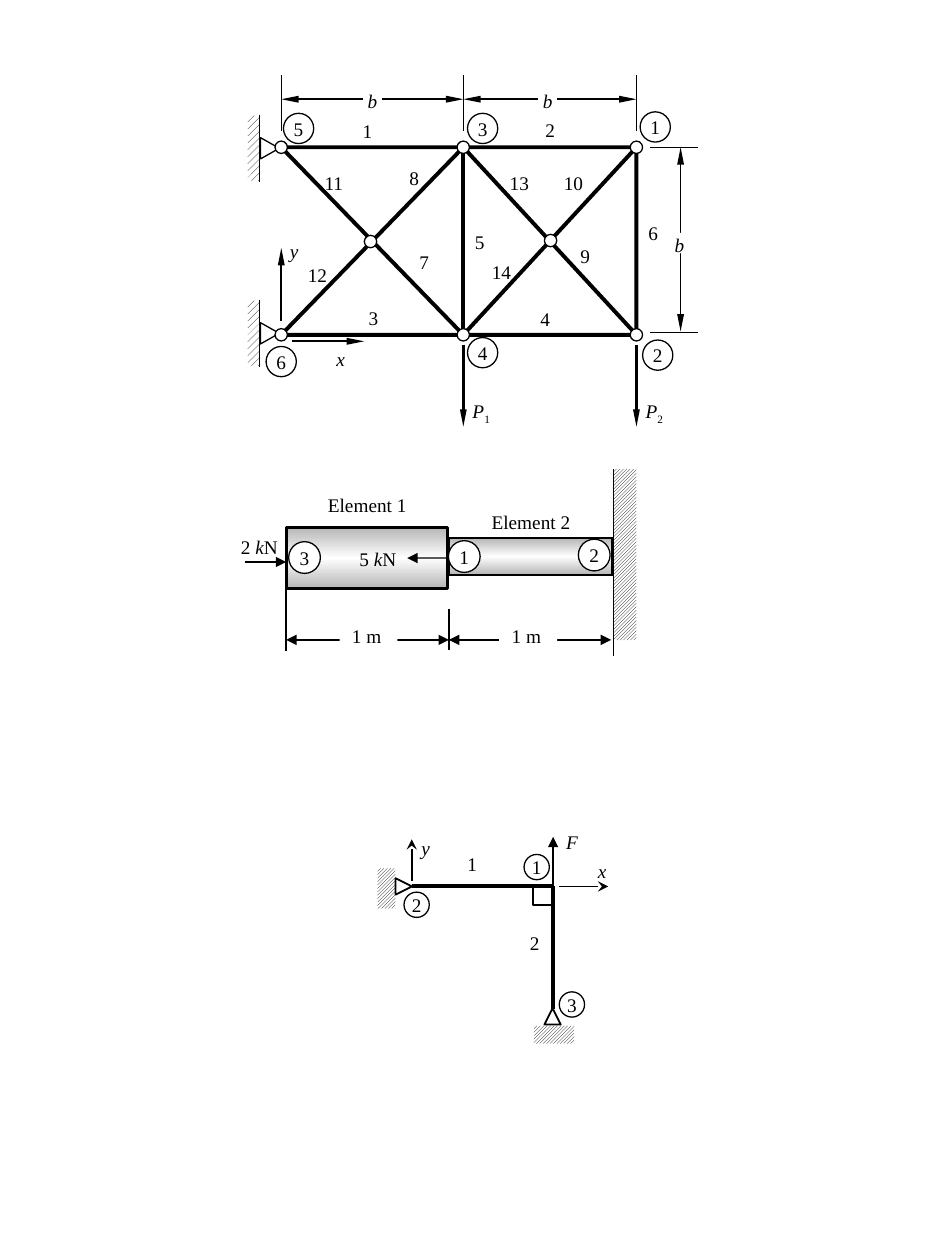
from copy import deepcopy
from dataclasses import dataclass

from lxml import etree
from pptx import Presentation
from pptx import util as u
from pptx.dml.color import RGBColor
from pptx.enum import dml, shapes, text
from pptx.oxml.ns import qn


@dataclass(frozen=True)
class Theme:
    """Colours, font, type size and line widths in points."""
    ink: RGBColor = RGBColor(0, 0, 0)
    paper: RGBColor = RGBColor(255, 255, 255)
    steel: RGBColor = RGBColor(0xB6, 0xB6, 0xB6)
    font: str = "Times New Roman"
    size: float = 11
    hair: float = 0.75
    thin: float = 1
    force: float = 1.5
    member: float = 2.25


@dataclass(frozen=True)
class Region:
    """A box on the page, in centimetres."""
    page: object
    left: float
    top: float

    def at(self, x, y):
        """Turn a point of the region into a point of the page."""
        return u.Cm(self.left + x), u.Cm(self.top + y)


THEME = Theme()
SHAPE = shapes.MSO_SHAPE
ALIGN = text.PP_ALIGN
ANCHOR = text.MSO_ANCHOR
WIDE = dml.MSO_PATTERN.WIDE_UPWARD_DIAGONAL
LIGHT = dml.MSO_PATTERN.LIGHT_UPWARD_DIAGONAL
ITALIC = {"italic": True}
KILONEWTON = [(" k", ITALIC), ("N", {})]


def ink_line(item, width):
    """Give an item a black line, or none when the width is zero."""
    if width:
        item.line.color.rgb = THEME.ink
        item.line.width = u.Pt(width)
    else:
        item.line.fill.background()


def add_line(region, start, end, width, tail=None, head=None, narrow=False):
    """Draw a straight line with optional arrowheads."""
    line = region.page.shapes.add_connector(
        shapes.MSO_CONNECTOR.STRAIGHT, *region.at(*start), *region.at(*end))
    ink_line(line, width)
    properties = line.element.spPr
    outline = properties.find(qn("a:ln"))
    for tag, kind in (("a:headEnd", head), ("a:tailEnd", tail)):
        if kind:
            tip = etree.SubElement(outline, qn(tag), type=kind)
            if narrow:
                tip.set("w", "sm")
                tip.set("len", "lg")
    etree.SubElement(properties, qn("a:effectLst"))
    return line


def add_path(region, points, width):
    """Draw an open unfilled path through the points."""
    spots = [region.at(*point) for point in points]
    builder = region.page.shapes.build_freeform(*spots[0])
    builder.add_line_segments(spots[1:], close=False)
    path = builder.convert_to_shape()
    path.shadow.inherit = False
    path.fill.background()
    ink_line(path, width)


def add_block(region, kind, center, size, width=0, fill=None, pattern=None, turn=0):
    """Place a preset shape by its centre."""
    wide, high = size
    corner = region.at(center[0] - wide / 2, center[1] - high / 2)
    block = region.page.shapes.add_shape(kind, *corner, u.Cm(wide), u.Cm(high))
    block.shadow.inherit = False
    block.rotation = turn
    ink_line(block, width)
    if pattern:
        block.fill.patterned()
        block.fill.pattern = pattern
        block.fill.fore_color.rgb = THEME.ink
        block.fill.back_color.rgb = THEME.paper
    elif fill:
        block.fill.solid()
        block.fill.fore_color.rgb = fill
    else:
        block.fill.background()
    return block


def write(box, runs, align=ALIGN.CENTER, anchor=ANCHOR.TOP, margins=(0, 0, 0, 0), wrap=True):
    """Fill a box with one paragraph of formatted runs."""
    frame = box.text_frame
    layout = dict(zip(("margin_left", "margin_top", "margin_right", "margin_bottom"), map(u.Cm, margins)))
    layout.update(word_wrap=wrap, vertical_anchor=anchor)
    for name, value in layout.items():
        setattr(frame, name, value)
    para = frame.paragraphs[0]
    para.alignment = align
    for words, extra in runs:
        span = para.add_run()
        span.text = words
        span.font.color.rgb = THEME.ink
        look = {"name": THEME.font, "size": u.Pt(THEME.size), "italic": False, **extra}
        subscript = look.pop("subscript", False)
        for name, value in look.items():
            setattr(span.font, name, value)
        if subscript:
            span._r.get_or_add_rPr().set("baseline", "-25000")


def add_label(region, runs, center, size, fill=None, **layout):
    """Place text by the centre of its box, on a patch when a fill is given."""
    if fill:
        box = add_block(region, SHAPE.RECTANGLE, center, size, fill=fill)
    else:
        corner = region.at(center[0] - size[0] / 2, center[1] - size[1] / 2)
        box = region.page.shapes.add_textbox(*corner, *map(u.Cm, size))
    write(box, runs, **layout)


def add_node(region, number, center, size, fill=None):
    """Draw a numbered circle."""
    circle = add_block(region, SHAPE.OVAL, center, (size, size), THEME.hair, fill)
    write(circle, [(str(number), {})], anchor=ANCHOR.MIDDLE)


def add_bar(region, center, size):
    """Draw a bar shaded like a cylinder."""
    bar = add_block(region, SHAPE.RECTANGLE, center, size, THEME.force)
    bar.fill.gradient()
    bar.fill.gradient_angle = 270
    for stop, color in zip(bar.fill.gradient_stops, (THEME.steel, THEME.paper)):
        stop.color.rgb = color
    stops = bar.element.spPr.find(".//" + qn("a:gsLst"))
    stops.append(deepcopy(stops[0]))
    for stop, position in zip(stops, (0, 50000, 100000)):
        stop.set("pos", str(position))
    return bar


def draw_truss(region):
    """Draw the truss with its supports, dimensions, axes and loads."""
    left, middle, right = columns = 0.69, 4.36, 7.85
    top, bottom = 1.45, 5.23
    hubs = [(2.49, 3.35), (6.12, 3.33)]
    small = (0.38, 0.41)
    add_path(region, [(left, bottom), (right, bottom), (right, top), (left, top),
                      (middle, bottom), (right, top)], THEME.member)
    add_path(region, [(left, bottom), (middle, top), (right, bottom)], THEME.member)
    add_line(region, (middle, bottom), (middle, top), THEME.member)
    for start, end in [((left, 0.48), (middle, 0.48)), ((middle, 0.48), (right, 0.48)),
                       ((8.74, top), (8.74, 5.16))]:
        add_line(region, start, end, THEME.thin, "triangle", "triangle", narrow=True)
    for start, end in [((0.91, 5.36), (2.36, 5.36)), ((left, 4.95), (left, 3.48))]:
        add_line(region, start, end, THEME.thin, "triangle", narrow=True)
    for number, x in enumerate((middle, right), 1):
        add_line(region, (x, 5.43), (x, 7.08), THEME.force, "triangle", narrow=True)
        runs = [("P", ITALIC), (str(number), {"subscript": True})]
        add_label(region, runs, (x + 0.36, 6.8), (0.53, 0.53), THEME.paper)
    members = [(2.43, 1.09), (6.11, 1.07), (2.55, 4.85), (6.01, 4.88), (4.69, 3.33), (8.19, 3.15),
               (3.57, 3.73), (3.37, 2.03), (6.82, 3.61), (6.58, 2.13), (1.75, 2.13), (1.42, 3.99),
               (5.49, 2.13), (5.13, 3.94)]
    for number, center in enumerate(members, 1):
        add_label(region, [(str(number), {})], center, (0.38 if number < 10 else 0.51, 0.41))
    nodes = [(8.23, 1.04), (8.28, 5.64), (4.75, 1.07), (4.75, 5.59), (1.04, 1.07), (0.69, 5.77)]
    for number, center in enumerate(nodes, 1):
        add_node(region, number, center, 0.61)
    for center in [(2.53, 0.48), (6.06, 0.48), (8.72, 3.38)]:
        add_label(region, [("b", ITALIC)], center, small, THEME.paper)
    for name, center in (("x", (1.89, 5.69)), ("y", (0.95, 3.51))):
        add_label(region, [(name, ITALIC)], center, small)
    for y in (1.47, 5.2):
        add_block(region, SHAPE.RECTANGLE, (0.14, y), (0.25, 1.32), pattern=WIDE)
        add_block(region, SHAPE.ISOSCELES_TRIANGLE, (0.46, y), (0.43, 0.38), THEME.hair, THEME.paper, turn=90)
        add_line(region, (0.25, y - 0.68), (0.25, y + 0.67), THEME.hair)
    for x in columns:
        add_line(region, (x, 1.12), (x, 0), THEME.hair)
    for y in (top, 5.18):
        add_line(region, (9.09, y), (8.13, y), THEME.hair)
    for center in [(x, y) for x in columns for y in (top, bottom)] + hubs:
        add_block(region, SHAPE.OVAL, center, (0.25, 0.25), THEME.hair, THEME.paper)


def draw_stepped_bar(region):
    """Draw the two-element bar fixed to a wall."""
    start, step, wall = 1.17, 4.45, 7.77
    add_bar(region, (6.1, 1.77), (3.3, 0.74))
    thick = add_bar(region, (2.8, 1.8), (3.25, 1.22))
    add_block(region, SHAPE.RECTANGLE, (8, 1.73), (0.46, 3.45), pattern=LIGHT)
    for x, y, end in ((wall, 3.78, 0), (step, 2.82, 3.66), (start, 2.39, 3.68)):
        add_line(region, (x, y), (x, end), THEME.thin)
    for x, end, center in ((start, step, 2.83), (step, 7.72, 6.05)):
        add_line(region, (x, 3.45), (end, 3.45), THEME.thin, "triangle", "triangle")
        add_label(region, [("1 m", {})], (center, 3.44), (1.17, 0.86), THEME.paper,
                  align=ALIGN.JUSTIFY, margins=(0.25, 0.13, 0.25, 0.13))
    pull = add_line(region, (4.42, 1.8), (3.61, 1.8), THEME.hair, "triangle")
    pull.begin_connect(thick, 3)
    add_line(region, (0.33, 1.88), (start, 1.88), THEME.force, "triangle")
    for force, center, before, after in (("5", (3.24, 1.88), 0, 0.25), ("2", (0.6, 1.65), 0.25, 0)):
        add_label(region, [(force, {})] + KILONEWTON, center, (1.19, 0.86),
                  align=ALIGN.JUSTIFY, margins=(before, 0.13, after, 0.13))
    for number, center in enumerate([(4.76, 1.77), (7.38, 1.74), (1.54, 1.79)], 1):
        add_node(region, number, center, 0.64, THEME.paper)
    for number, center in enumerate([(2.81, 0.72), (6.11, 1.08)], 1):
        add_label(region, [(f"Element {number}", {})], center, (1.6, 0.48),
                  align=ALIGN.LEFT, anchor=ANCHOR.MIDDLE, wrap=False)


def draw_frame(region):
    """Draw the right-angled two-member frame."""
    left, corner, level = 0.71, 3.56, 1.13
    for ground, pin, turn in (((3.58, 4.12), (3.55, 3.75), 0), ((0.2, 1.17), (0.55, level), 90)):
        add_block(region, SHAPE.RECTANGLE, ground, (0.81, 0.36), pattern=LIGHT, turn=turn)
        add_block(region, SHAPE.ISOSCELES_TRIANGLE, pin, (0.33, 0.33), THEME.thin, turn=turn)
    add_line(region, (left, level), (corner, level), THEME.member)
    add_line(region, (corner, 3.61), (corner, level), THEME.member)
    add_path(region, [(3.15, level), (3.15, 1.5), (3.53, 1.5)], THEME.thin)
    add_line(region, (3.68, level), (4.67, level), THEME.thin, "stealth")
    add_line(region, (left, 1.02), (left, 0.18), THEME.thin, "stealth")
    add_line(region, (corner, level), (corner, 0.13), THEME.force, "triangle")
    for name, look, center in (("1", {}, (1.93, 0.77)), ("2", {}, (3.19, 2.35)), ("x", ITALIC, (4.55, 0.9)),
                               ("y", ITALIC, (0.99, 0.44)), ("F", ITALIC, (3.94, 0.32))):
        add_label(region, [(name, look)], center, (0.56, 0.64))
    for number, center in enumerate([(3.23, 0.74), (0.81, 1.5), (3.94, 3.51)], 1):
        add_node(region, number, center, 0.51, THEME.paper)


def main():
    """Build the page and save the deck."""
    deck = Presentation()
    deck.slide_width, deck.slide_height = u.Cm(19.05), u.Cm(25.4)
    page = deck.slides.add_slide(deck.slide_layouts[6])
    draw_truss(Region(page, 4.98, 1.52))
    draw_stepped_bar(Region(page, 4.6, 9.45))
    draw_frame(Region(page, 7.59, 16.74))
    deck.save("out.pptx")


if __name__ == "__main__":
    main()
